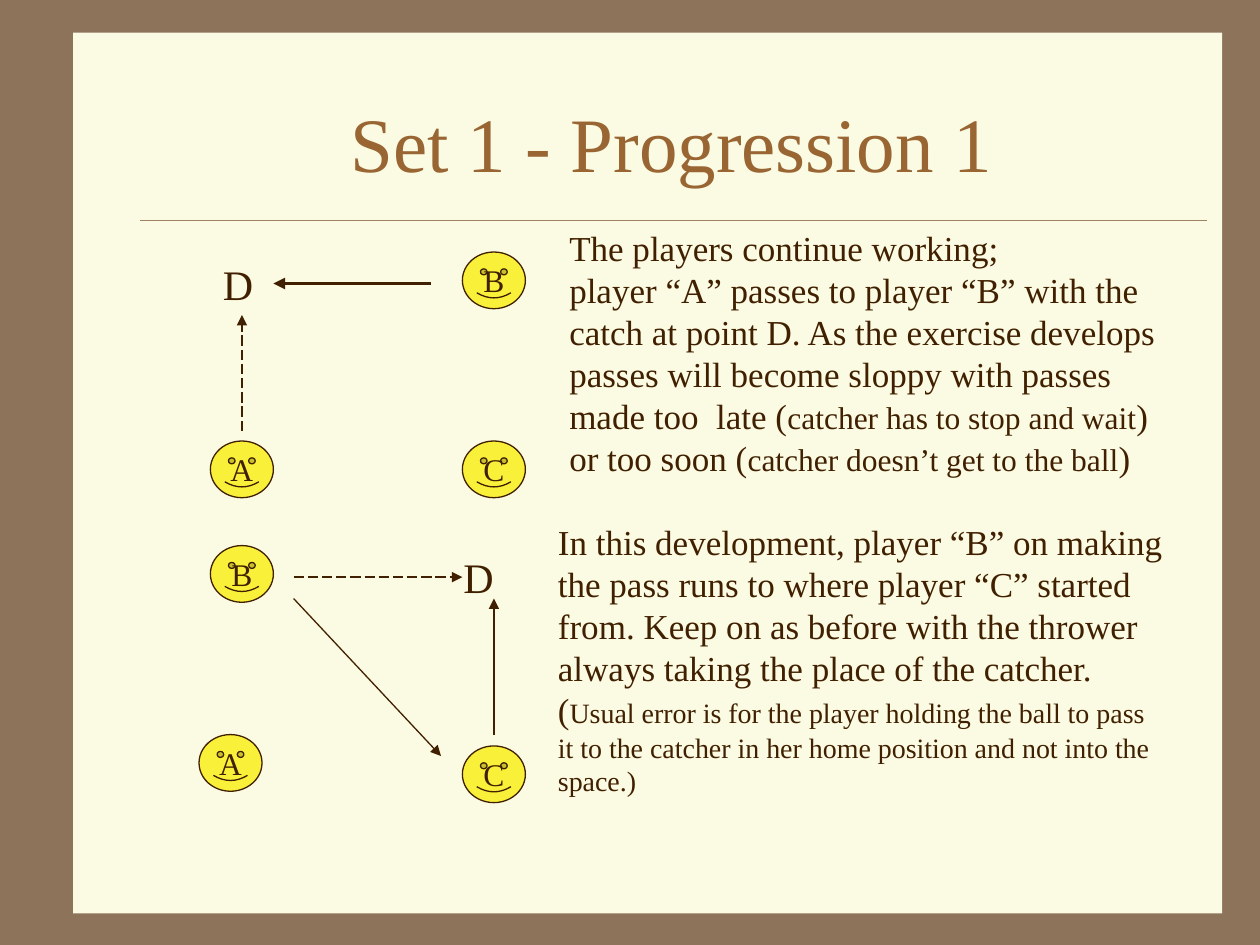
"""Build the passing drill slide with its two player diagrams."""
from dataclasses import dataclass

from lxml import etree
from pptx import Presentation
from pptx.dml.color import RGBColor
from pptx.enum import dml, shapes, text
from pptx.oxml import ns
from pptx.util import Inches, Pt

FONT = "Times New Roman"
FRAME = RGBColor(0x8C, 0x73, 0x5A)
PAPER = RGBColor(0xFB, 0xFA, 0xE2)
RULE = RGBColor(0xA0, 0x83, 0x66)
TITLE = RGBColor(0x99, 0x66, 0x33)
INK = RGBColor(0x40, 0x20, 0x00)
YELLOW = RGBColor(0xF9, 0xF0, 0x39)


@dataclass
class Player:
    name: str
    x: float
    y: float


@dataclass
class Move:
    x1: float
    y1: float
    x2: float
    y2: float
    width: float = 0.75
    dashed: bool = False


@dataclass
class Note:
    x: float
    y: float
    w: float
    h: float
    runs: list[tuple[str, int]]


PLAYERS = [
    Player("A", 1.67, 3.5), Player("C", 3.67, 3.5), Player("B", 3.67, 2),
    Player("A", 1.58, 5.83), Player("C", 3.67, 5.92), Player("B", 1.67, 4.33),
]
MOVES = [
    Move(3.42, 2.25, 2.17, 2.25, width=2.25),
    Move(1.92, 3.42, 1.92, 2.5, dashed=True),
    Move(3.92, 5.83, 3.92, 4.75),
    Move(2.33, 4.58, 3.67, 4.58, dashed=True),
    Move(2.33, 4.75, 3.5, 6),
]
NOTES = [
    Note(1.67, 2, 0.52, 0.5, [("D", 24)]),
    Note(3.58, 4.33, 0.52, 0.5, [("D", 24)]),
    Note(4.42, 1.75, 5, 2.1, [
        ("The players continue working;\nplayer “A” passes to player “B” with the "
         "catch at point D. As the exercise develops passes will become sloppy "
         "with passes made too  late (", 20),
        ("catcher has to stop and wait", 18),
        (") or too soon (", 20),
        ("catcher doesn’t get to the ball", 18),
        (")", 20),
    ]),
    Note(4.33, 4.08, 5, 2.3, [
        ("In this development, player “B” on making the pass runs to where player "
         "“C” started from. Keep on as before with the thrower always taking the "
         "place of the catcher.\n(", 20),
        ("Usual error is for the player holding the ball to pass it to the catcher "
         "in her home position and not into the space.)", 16),
    ]),
]


def add_text(p, content: str, *, size: int, color: RGBColor = INK) -> None:
    """Append formatted text, turning newlines into line breaks."""
    for i, line in enumerate(content.split("\n")):
        if i:
            p.add_line_break()
        r = p.add_run()
        r.text = line
        r.font.name, r.font.size = FONT, Pt(size)
        r.font.color.rgb = color


def add_line(s, move: Move, *, color: RGBColor = INK, arrow: bool = True) -> None:
    """Draw a straight line, with an arrowhead at its end if wanted."""
    c = s.shapes.add_connector(
        shapes.MSO_CONNECTOR.STRAIGHT, Inches(move.x1), Inches(move.y1),
        Inches(move.x2), Inches(move.y2))
    c.line.color.rgb = color
    c.line.width = Pt(move.width)
    if move.dashed:
        c.line.dash_style = dml.MSO_LINE.LONG_DASH
    if arrow:
        ln = c.line._get_or_add_ln()
        etree.SubElement(ln, ns.qn("a:tailEnd"), type="triangle")
    etree.SubElement(c.element.spPr, ns.qn("a:effectLst"))


def add_player(s, player: Player) -> None:
    """Draw a smiley face carrying the player's letter."""
    sp = s.shapes.add_shape(
        shapes.MSO_SHAPE.SMILEY_FACE, Inches(player.x), Inches(player.y),
        Inches(0.5), Inches(0.45))
    sp.shadow.inherit = False
    sp.adjustments[0] = 0.045
    sp.fill.solid()
    sp.fill.fore_color.rgb = YELLOW
    sp.line.color.rgb = INK
    sp.line.width = Pt(0.75)
    tf = sp.text_frame
    tf.word_wrap = False
    tf.vertical_anchor = text.MSO_ANCHOR.MIDDLE
    p = tf.paragraphs[0]
    p.alignment = text.PP_ALIGN.CENTER
    add_text(p, player.name, size=18)


def add_note(s, note: Note) -> None:
    """Add a wrapping text box made of sized runs."""
    sp = s.shapes.add_textbox(
        Inches(note.x), Inches(note.y), Inches(note.w), Inches(note.h))
    tf = sp.text_frame
    tf.word_wrap = True
    tf.auto_size = text.MSO_AUTO_SIZE.SHAPE_TO_FIT_TEXT
    for content, size in note.runs:
        add_text(tf.paragraphs[0], content, size=size)


def add_panel(s) -> None:
    """Draw the paper panel on the frame-coloured background."""
    s.background.fill.solid()
    s.background.fill.fore_color.rgb = FRAME
    sp = s.shapes.add_shape(
        shapes.MSO_SHAPE.RECTANGLE, Inches(0.58), Inches(0.26),
        Inches(9.12), Inches(6.99))
    sp.shadow.inherit = False
    sp.fill.solid()
    sp.fill.fore_color.rgb = PAPER
    sp.line.fill.background()


def set_title(s, content: str) -> None:
    """Place the title placeholder above the panel and fill it."""
    sp = s.shapes.title
    sp.element.getparent().append(sp.element)
    sp.left, sp.top = Inches(1.08), Inches(0.5)
    sp.width, sp.height = Inches(8.5), Inches(1.25)
    tf = sp.text_frame
    tf.auto_size = text.MSO_AUTO_SIZE.NONE
    tf.vertical_anchor = text.MSO_ANCHOR.MIDDLE
    p = tf.paragraphs[0]
    p.alignment = text.PP_ALIGN.CENTER
    add_text(p, content, size=44, color=TITLE)


def main() -> None:
    """Assemble and save the slide."""
    prs = Presentation()
    prs.slide_width, prs.slide_height = Inches(10), Inches(7.5)
    s = prs.slides.add_slide(prs.slide_layouts.get_by_name("Title Only"))
    add_panel(s)
    add_line(s, Move(1.11, 1.75, 9.58, 1.75, width=0.25), color=RULE, arrow=False)
    set_title(s, "Set 1 - Progression 1")
    for move in MOVES:
        add_line(s, move)
    for note in NOTES:
        add_note(s, note)
    for player in PLAYERS:
        add_player(s, player)
    prs.save("out.pptx")


if __name__ == "__main__":
    main()
